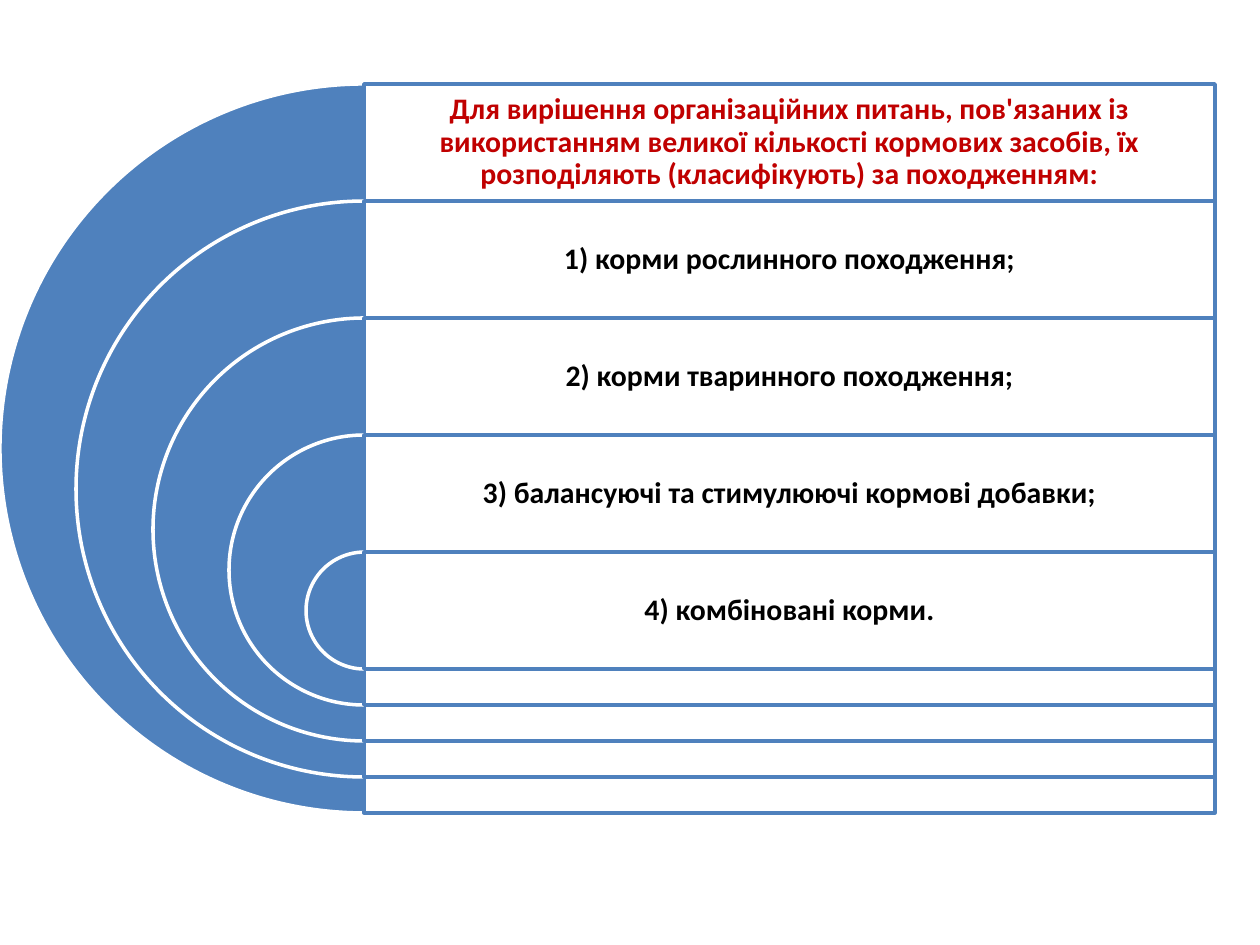
from dataclasses import dataclass

from lxml.etree import SubElement
from pptx import Presentation
from pptx.dml.color import RGBColor
from pptx.enum.shapes import MSO_SHAPE as Preset
from pptx.enum.text import MSO_ANCHOR as Anchor, PP_ALIGN as Align
from pptx.oxml.ns import qn
from pptx.shapes.autoshape import Shape
from pptx.slide import Slide
from pptx.util import Emu, Pt

SCALE = 914400 / 126
CENTER_X, TOP = 364, 84
PANEL_WIDTH, ROW_HEIGHT = 851, 117
DIAMETER_STEP = 153
INSET = 9
BLUE, WHITE, BLACK, RED = "4F81BD", "FFFFFF", "000000", "C00000"


@dataclass(frozen=True)
class Level:
    text: str
    color: str = BLACK


LEVELS = [
    Level(
        "Для вирішення організаційних питань, пов'язаних із використанням "
        "великої кількості кормових засобів, їх розподіляють (класифікують) "
        "за походженням:",
        RED,
    ),
    Level("1) корми рослинного походження;"),
    Level("2) корми тваринного походження;"),
    Level("3) балансуючі та стимулюючі кормові добавки;"),
    Level("4) комбіновані корми."),
]


def px(length: int) -> Emu:
    """Turn pixels into EMU."""
    return Emu(round(length * SCALE))


def rgb(color: str) -> RGBColor:
    """Turn a hex string into a colour."""
    return RGBColor.from_string(color)


def add_outlined(slide: Slide, preset: Preset, left: int, top: int,
                 width: int, height: int, fill: str, line: str) -> Shape:
    """Add a flat preset shape with a fill and a 2 pt outline."""
    shape = slide.shapes.add_shape(preset, px(left), px(top), px(width), px(height))
    shape.shadow.inherit = False
    shape.fill.solid()
    shape.fill.fore_color.rgb = rgb(fill)
    shape.line.color.rgb = rgb(line)
    shape.line.width = Pt(2)
    return shape


def add_half_disc(slide: Slide, top: int, diameter: int) -> None:
    """Add the left half of a disc centred on the panel edge."""
    disc = add_outlined(slide, Preset.PIE, CENTER_X - diameter // 2, top,
                        diameter, diameter, BLUE, WHITE)
    disc.adjustments[0] = 54
    disc.adjustments[1] = 162


def add_panel(slide: Slide, top: int, height: int) -> None:
    """Add a nearly opaque white panel with a blue outline."""
    panel = add_outlined(slide, Preset.RECTANGLE, CENTER_X, top,
                         PANEL_WIDTH, height, WHITE, BLUE)
    color = panel.fill._xPr.find(f"{qn('a:solidFill')}/{qn('a:srgbClr')}")
    SubElement(color, qn("a:alpha"), val="90000")


def add_label(slide: Slide, top: int, level: Level) -> None:
    """Add the centred text of one level."""
    box = slide.shapes.add_textbox(px(CENTER_X), px(top), px(PANEL_WIDTH), px(ROW_HEIGHT))
    frame = box.text_frame
    frame.word_wrap = True
    frame.vertical_anchor = Anchor.MIDDLE
    frame.margin_left = frame.margin_right = px(INSET)
    frame.margin_top = frame.margin_bottom = px(INSET)
    paragraph = frame.paragraphs[0]
    paragraph.alignment = Align.CENTER
    paragraph.line_spacing = 0.9
    paragraph.space_after = Pt(6)
    run = paragraph.add_run()
    run.text = level.text
    run.font.name = "Calibri"
    run.font.size = Pt(17)
    run.font.bold = True
    run.font.color.rgb = rgb(level.color)


def main() -> None:
    """Build the slide of nested levels and save it."""
    presentation = Presentation()
    presentation.slide_width = px(1260)
    presentation.slide_height = px(945)
    slide = presentation.slides.add_slide(presentation.slide_layouts[6])
    for index, level in enumerate(LEVELS):
        top = TOP + index * ROW_HEIGHT
        diameter = ROW_HEIGHT + (len(LEVELS) - 1 - index) * DIAMETER_STEP
        add_half_disc(slide, top, diameter)
        add_panel(slide, top, diameter)
        add_label(slide, top, level)
    presentation.save("out.pptx")


if __name__ == "__main__":
    main()
